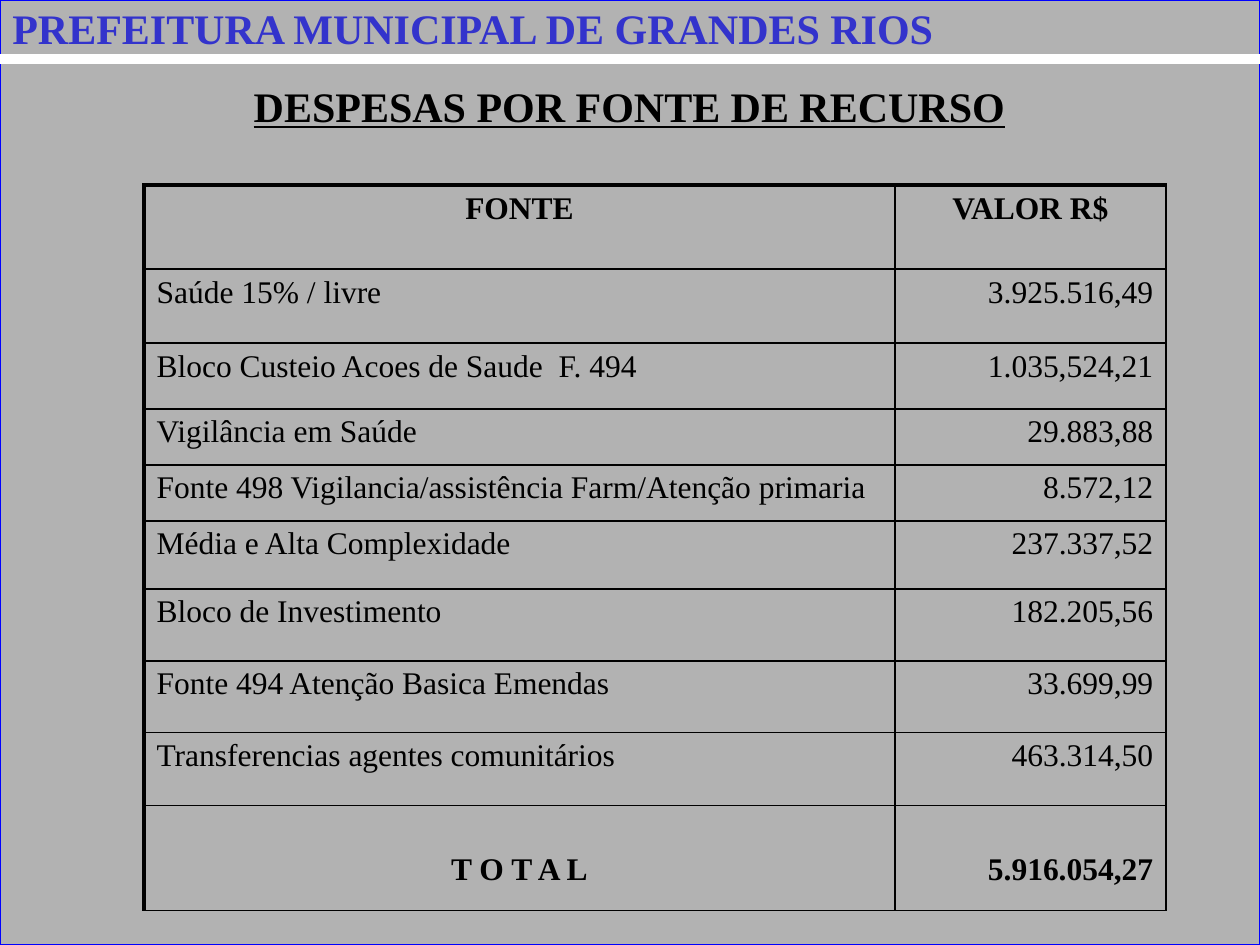
from dataclasses import dataclass

from lxml.etree import SubElement
from pptx import Presentation
from pptx.dml.color import RGBColor
from pptx.enum.shapes import MSO_CONNECTOR, MSO_SHAPE
from pptx.enum.text import MSO_ANCHOR, MSO_AUTO_SIZE, PP_ALIGN
from pptx.oxml import parse_xml
from pptx.oxml.ns import nsdecls, qn
from pptx.util import Emu, Pt

SCALE = 914400 // 126
FONT = "Times New Roman"
GRAY = RGBColor(0xB2, 0xB2, 0xB2)
BLUE = RGBColor(0x00, 0x00, 0xFF)
INDIGO = RGBColor(0x33, 0x33, 0xCC)
BLACK = RGBColor(0x00, 0x00, 0x00)
WHITE = RGBColor(0xFF, 0xFF, 0xFF)
COLUMNS = (751, 271)


@dataclass
class Row:
    source: str
    value: str
    height: int
    bold: bool = False
    source_align: PP_ALIGN = PP_ALIGN.LEFT
    value_align: PP_ALIGN = PP_ALIGN.RIGHT
    top: int = 6


ROWS = (
    Row("FONTE", "VALOR R$", 84, True, PP_ALIGN.CENTER, PP_ALIGN.CENTER),
    Row("Saúde 15% / livre", "3.925.516,49", 74),
    Row("Bloco Custeio Acoes de Saude  F. 494", "1.035,524,21", 66),
    Row("Vigilância em Saúde", "29.883,88", 56),
    Row("Fonte 498 Vigilancia/assistência Farm/Atenção primaria", "8.572,12", 56),
    Row("Média e Alta Complexidade", "237.337,52", 68),
    Row("Bloco de Investimento", "182.205,56", 72),
    Row("Fonte 494 Atenção Basica Emendas", "33.699,99", 72),
    Row("Transferencias agentes comunitários", "463.314,50", 73),
    Row("T O T A L", "5.916.054,27", 105, True, PP_ALIGN.CENTER, top=47),
)


def px(n: int) -> Emu:
    return Emu(n * SCALE)


def write(tf, text: str, size: int, color: RGBColor, bold: bool, align: PP_ALIGN):
    p = tf.paragraphs[0]
    r = p.add_run()
    r.text = text
    p.alignment = align
    for font in (p.font, r.font):
        font.name, font.size, font.bold = FONT, Pt(size), bold
        font.color.rgb = color
    return p


def add_background(s) -> None:
    sp = s.shapes.add_shape(MSO_SHAPE.RECTANGLE, 0, 0, px(1260), px(945))
    sp.shadow.inherit = False
    sp.fill.solid()
    sp.fill.fore_color.rgb = GRAY
    sp.line.color.rgb = BLUE
    sp.line.width = Pt(0.75)
    rule = s.shapes.add_connector(MSO_CONNECTOR.STRAIGHT, 0, px(59), px(1260), px(59))
    rule.line.color.rgb = WHITE
    rule.line.width = Pt(6)
    SubElement(rule._element.spPr, qn("a:effectLst"))


def add_title(s) -> None:
    sp = s.shapes.title
    s.shapes._spTree.append(sp._element)
    sp.left, sp.top, sp.width, sp.height = map(px, (78, 49, 1103, 619))
    tf = sp.text_frame
    tf.auto_size = MSO_AUTO_SIZE.NONE
    tf.vertical_anchor = MSO_ANCHOR.TOP
    p = write(tf, "DESPESAS POR FONTE DE RECURSO", 24, BLACK, True, PP_ALIGN.CENTER)
    p.line_spacing = 1.5
    p.runs[0].font.underline = True


def add_header(s) -> None:
    tf = s.shapes.add_textbox(0, px(-4), px(1037), px(63)).text_frame
    tf.word_wrap = True
    p = write(tf, "PREFEITURA MUNICIPAL DE GRANDES RIOS", 24, INDIGO, True, PP_ALIGN.LEFT)
    shadow = parse_xml(
        f'<a:effectLst {nsdecls("a")}><a:outerShdw dist="35921" dir="2700000">'
        '<a:srgbClr val="808080"/></a:outerShdw></a:effectLst>'
    )
    p.runs[0].font._element.find(qn("a:solidFill")).addnext(shadow)


def set_border(cell, side: str, width: float) -> None:
    ln = SubElement(cell._tc.get_or_add_tcPr(), qn(f"a:ln{side}"), w=str(Pt(width)))
    fill = SubElement(ln, qn("a:solidFill"))
    SubElement(fill, qn("a:srgbClr"), val=str(BLACK))


def add_expenses(s) -> None:
    height = sum(row.height for row in ROWS)
    frame = s.shapes.add_table(
        len(ROWS), len(COLUMNS), px(144), px(185), px(sum(COLUMNS)), px(height)
    )
    table = frame.table
    table.first_row = table.horz_banding = False
    for column, width in zip(table.columns, COLUMNS):
        column.width = px(width)
    for i, row in enumerate(ROWS):
        table.rows[i].height = px(row.height)
        entries = ((row.source, row.source_align), (row.value, row.value_align))
        for j, (text, align) in enumerate(entries):
            cell = table.cell(i, j)
            cell.margin_top = px(row.top)
            write(cell.text_frame, text, 18, BLACK, row.bold, align)
            for side in "LRTB":
                thick = (side == "L" and j == 0) or (side == "T" and i == 0)
                set_border(cell, side, 2.25 if thick else 1)
            cell.fill.background()


def main() -> None:
    prs = Presentation()
    prs.slide_width, prs.slide_height = px(1260), px(945)
    s = prs.slides.add_slide(prs.slide_layouts[5])
    add_background(s)
    add_title(s)
    add_header(s)
    add_expenses(s)
    prs.save("out.pptx")


if __name__ == "__main__":
    main()
